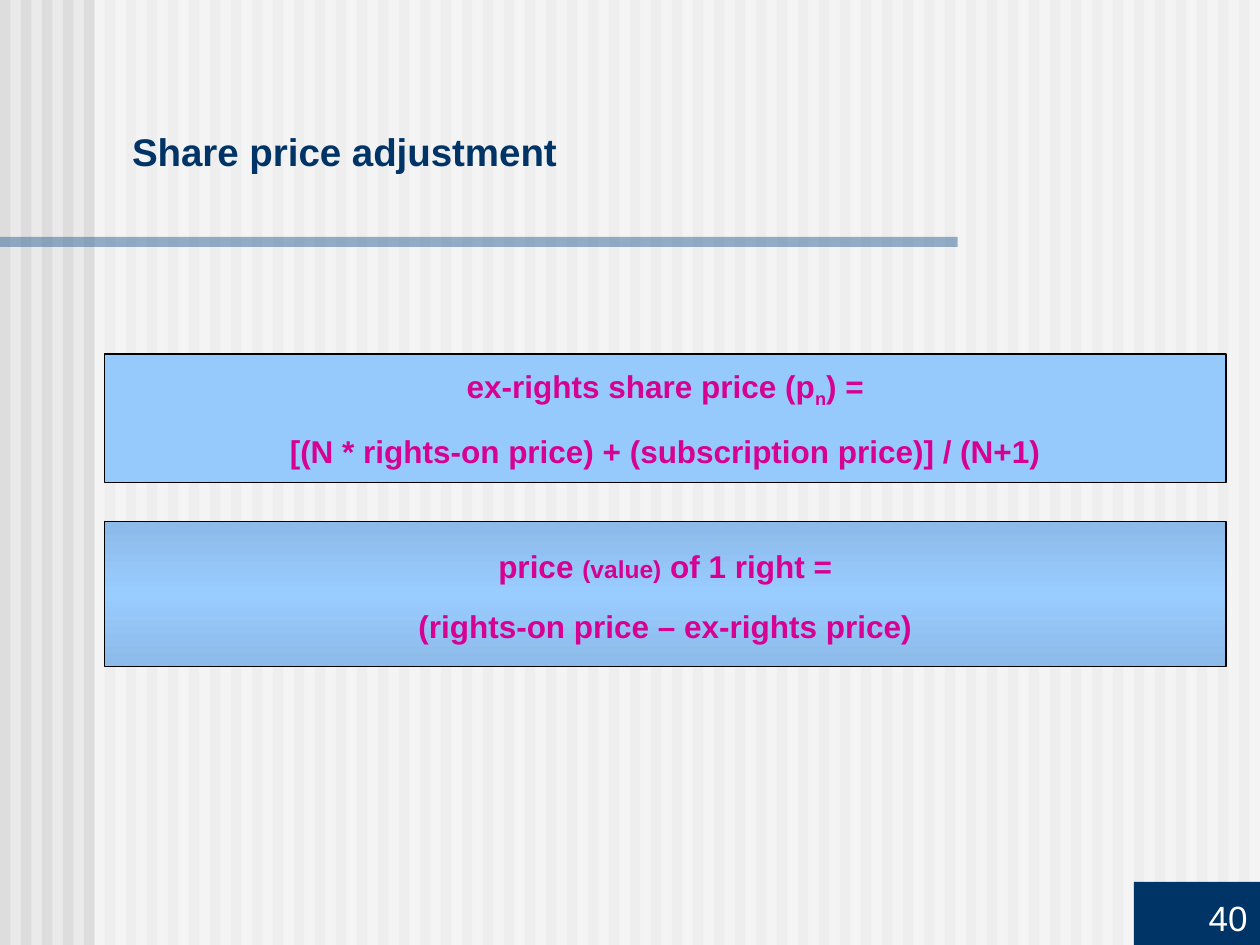
from lxml import etree
from pptx import Presentation
from pptx.dml.color import RGBColor
from pptx.enum import shapes, text
from pptx.oxml import ns
from pptx.util import Inches, Pt

PAPER = RGBColor(0xEA, 0xEA, 0xEA)
STRIPE = RGBColor(0xDD, 0xDD, 0xDD)
WHITE = RGBColor(0xFF, 0xFF, 0xFF)
BLACK = RGBColor(0x00, 0x00, 0x00)
STEEL = RGBColor(0x33, 0x66, 0x99)
NAVY = RGBColor(0x00, 0x33, 0x66)
MAGENTA = RGBColor(0xD6, 0x00, 0x93)
SKY = RGBColor(0x99, 0xCC, 0xFF)
PALE_SKY = RGBColor(0x97, 0xCA, 0xFC)
DEEP_SKY = RGBColor(0x8C, 0xBA, 0xE9)


def add_rect(parent, box, color, alpha=None):
    """Add a plain rectangle, optionally see-through by a percentage."""
    rect = parent.add_shape(shapes.MSO_SHAPE.RECTANGLE, *map(Inches, box))
    rect.shadow.inherit = False
    rect.line.fill.background()
    rect.fill.solid()
    rect.fill.fore_color.rgb = color
    if alpha is not None:
        tint = rect.fill._xPr.find(".//" + ns.qn("a:srgbClr"))
        etree.SubElement(tint, ns.qn("a:alpha"), val=str(alpha * 1000))
    return rect


def shade(rect, edge, middle):
    """Fill a rectangle with a vertical gradient mirrored about its middle."""
    rect.fill.gradient()
    rect.fill.gradient_angle = 270
    stops = rect.fill._xPr.find(".//" + ns.qn("a:gsLst"))
    for stop in list(stops):
        stops.remove(stop)
    for place, color in ((0, edge), (50, middle), (100, edge)):
        stop = etree.SubElement(stops, ns.qn("a:gs"), pos=str(place * 1000))
        etree.SubElement(stop, ns.qn("a:srgbClr"), val=str(color))


def write(shape, lines, size, color, bold=False, align=text.PP_ALIGN.LEFT,
          anchor=text.MSO_ANCHOR.MIDDLE, wrap=True, gap=0, top=0.05):
    """Write lines of (text, run format) pairs into a shape."""
    frame = shape.text_frame
    frame.word_wrap = wrap
    frame.vertical_anchor = anchor
    frame.margin_top = Inches(top)
    for index, line in enumerate(lines):
        paragraph = frame.paragraphs[0] if index == 0 else frame.add_paragraph()
        paragraph.alignment = align
        if index:
            paragraph.space_before = Pt(gap)
        for words, style in line:
            run = paragraph.add_run()
            run.text = words
            run.font.name = "Arial"
            run.font.size = Pt(style.get("size", size))
            run.font.bold = bold
            run.font.color.rgb = color
            if "baseline" in style:
                run.font._element.set("baseline", str(style["baseline"] * 1000))


def add_backdrop(slide, box):
    """Draw the striped backdrop with its veil and the rule under the title."""
    left, top, width, height = box
    slide.background.fill.solid()
    slide.background.fill.fore_color.rgb = PAPER
    stripes = slide.shapes.add_group_shape().shapes
    count = 60
    pitch = width / count
    for index in range(count):
        add_rect(stripes, (left + index * pitch, top, pitch / 2, height), STRIPE)
    margin = 0.75
    add_rect(slide.shapes, (left + margin, top, width - margin, height), WHITE, alpha=50)
    add_rect(slide.shapes, (left, top + 1.88, 7.6, 0.08), STEEL, alpha=50)


def add_title(slide, box, words):
    """Place the slide title."""
    title = slide.shapes.add_textbox(*map(Inches, box))
    write(title, [[(words, {})]], size=22, color=NAVY, bold=True)


def add_page_number(slide, box, number):
    """Place the page number on its corner block."""
    corner = add_rect(slide.shapes, box, NAVY)
    write(corner, [[(number, {})]], size=20, color=WHITE,
          align=text.PP_ALIGN.RIGHT, anchor=text.MSO_ANCHOR.BOTTOM)


def add_formula(slide, box, lines, edge, **layout):
    """Place a framed formula on a shaded panel."""
    panel = add_rect(slide.shapes, box, SKY)
    shade(panel, edge, SKY)
    panel.line.color.rgb = BLACK
    panel.line.width = Pt(0.75)
    write(panel, lines, size=18, color=MAGENTA, bold=True,
          align=text.PP_ALIGN.CENTER, **layout)


def main():
    """Build the slide and save it."""
    deck = Presentation()
    deck.slide_width, deck.slide_height = Inches(10), Inches(7.5)
    slide = deck.slides.add_slide(deck.slide_layouts[6])
    add_backdrop(slide, (0, 0, 10, 7.5))
    add_page_number(slide, (9, 7, 1, 0.5), "40")
    add_title(slide, (0.95, 0.94, 8.93, 0.52), "Share price adjustment")
    ex_rights_price = [
        [("ex-rights share price (p", {}), ("n", {"baseline": -25}), (") =", {})],
        [("[(N * rights-on price) + (subscription price)] / (N+1)", {})],
    ]
    add_formula(slide, (0.83, 2.81, 8.9, 1.02), ex_rights_price, PALE_SKY,
                wrap=False, gap=13)
    right_value = [
        [("price ", {}), ("(value)", {"size": 14}), (" of 1 right =", {})],
        [("(rights-on price – ex-rights price)", {})],
    ]
    add_formula(slide, (0.83, 4.14, 8.9, 1.15), right_value, DEEP_SKY,
                anchor=text.MSO_ANCHOR.TOP, gap=13, top=0.2)
    deck.save("out.pptx")


if __name__ == "__main__":
    main()
